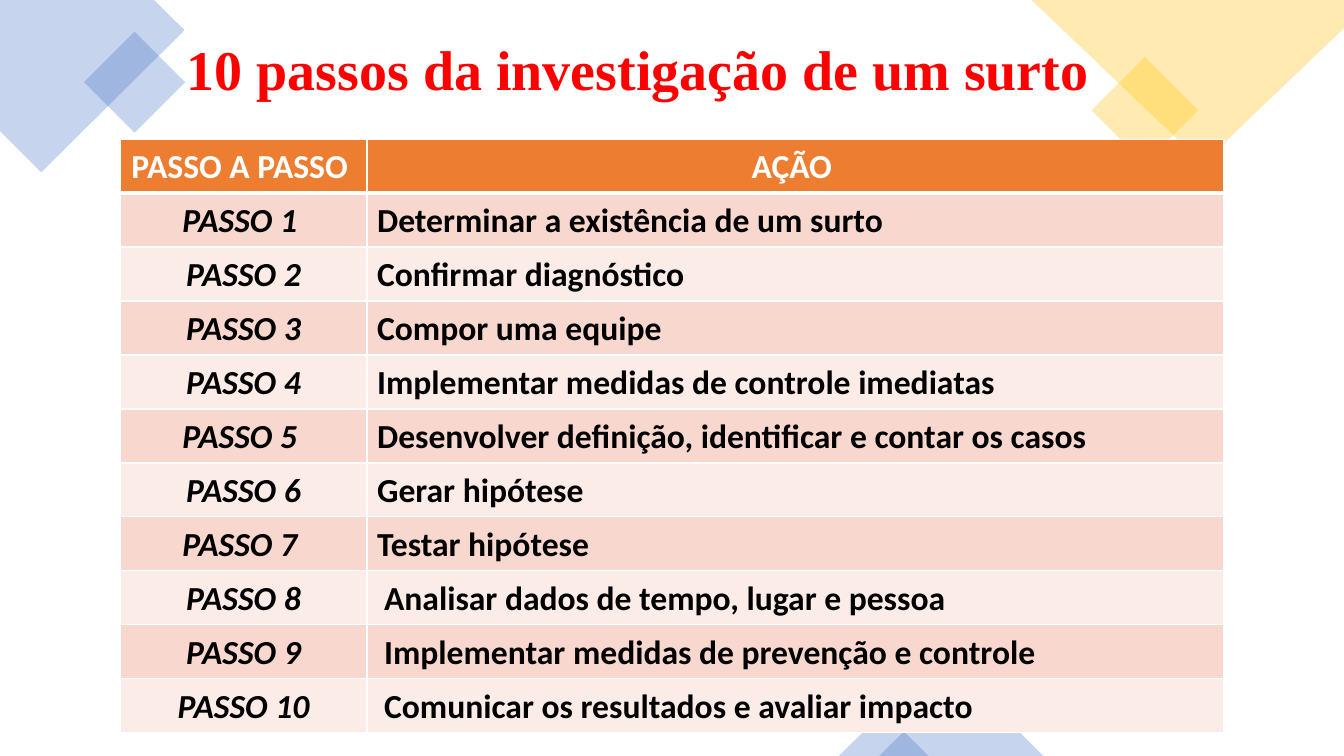
import pptx
import pptx.dml.color
import pptx.enum.shapes
import pptx.enum.text
import pptx.oxml
import pptx.oxml.ns
import pptx.util
from dataclasses import dataclass

# Content
TITLE = "10 passos da investigação de um surto"
HEADERS = ("PASSO A PASSO ", "AÇÃO ")
ACTIONS = [
    "Determinar a existência de um surto",
    "Confirmar diagnóstico",
    "Compor uma equipe",
    "Implementar medidas de controle imediatas",
    "Desenvolver definição, identificar e contar os casos",
    "Gerar hipótese",
    "Testar hipótese",
    "Analisar dados de tempo, lugar e pessoa",
    "Implementar medidas de prevenção e controle",
    "Comunicar os resultados e avaliar impacto",
]
FIRST_INDENTED_STEP = 8
STEPS_WITH_TRAILING_SPACE = (1, 5, 7)


@dataclass(frozen=True)
class Theme:
    blue: str = "4472C4"
    gold: str = "FFC000"
    title: str = "FF0000"
    header: str = "ED7D31"
    bands: tuple = ("F8D7CE", "FCECE8")
    white: str = "FFFFFF"
    black: str = "000000"
    title_font: str = "Times New Roman"
    table_font: str = "Calibri"
    title_size: int = 40
    table_size: int = 24
    opacity: int = 30


# Layout, in inches
WIDTH, HEIGHT = 13.33, 7.5
TITLE_BOX = (0.85, 0.29, 10.95, 0.77)
TABLE_LEFT, TABLE_TOP = 1.19, 1.38
COLUMNS = (2.45, 8.5)
ROW_HEIGHT = 0.53
INSET, INDENT = 0.1, 0.07

CORNERS = [
    (Theme.blue, [(1.53, 0), (0, 0), (0, 1.3), (0.41, 1.71), (1.83, 0.3)]),
    (Theme.gold, [(WIDTH, 0), (10.23, 0), (11.93, 1.62), (WIDTH, 0.28)]),
]
SHAPES = pptx.enum.shapes.MSO_SHAPE
ACCENTS = [
    (SHAPES.RECTANGLE, (0.98, 0.46, 0.71, 0.71), 315, Theme.blue),
    (SHAPES.RECTANGLE, (10.98, 0.72, 0.75, 0.75), 315, Theme.gold),
    (SHAPES.ISOSCELES_TRIANGLE, (8.72, 6.69, 1.63, 0.81), 0, Theme.blue),
    (SHAPES.ISOSCELES_TRIANGLE, (8.32, 7.06, 0.89, 0.44), 0, Theme.blue),
]
ALIGN = pptx.enum.text.PP_ALIGN
inch = pptx.util.Inches


def rgb(color):
    return pptx.dml.color.RGBColor.from_string(color)


def paint_translucent(shape, color):
    shape.shadow.inherit = False
    shape.line.fill.background()
    shape.fill.solid()
    shape.fill.fore_color.rgb = rgb(color)
    tint = shape.fill._xPr.find(".//" + pptx.oxml.ns.qn("a:srgbClr"))
    alpha = pptx.oxml.parse_xml(
        f'<a:alpha {pptx.oxml.ns.nsdecls("a")} val="{Theme.opacity * 1000}"/>')
    tint.append(alpha)


def format_font(font, color, **values):
    font.color.rgb = rgb(color)
    for name, value in values.items():
        setattr(font, name, value)


def draw_borders(cell, widths):
    properties = cell._tc.get_or_add_tcPr()
    for side, width in zip("LRTB", widths):
        properties.append(pptx.oxml.parse_xml(
            f'<a:ln{side} {pptx.oxml.ns.nsdecls("a")} w="{pptx.util.Pt(width)}">'
            f'<a:solidFill><a:srgbClr val="{Theme.white}"/></a:solidFill></a:ln{side}>'))


def fill_cell(cell, text, fill, color, align, borders, italic=False, indent=0):
    draw_borders(cell, borders)
    cell.fill.solid()
    cell.fill.fore_color.rgb = rgb(fill)
    cell.margin_left = inch(INSET + indent)
    cell.text = text
    paragraph = cell.text_frame.paragraphs[0]
    spacing = {"alignment": align, "line_spacing": 1.07, "space_after": pptx.util.Pt(8)}
    for name, value in spacing.items():
        setattr(paragraph, name, value)
    format_font(paragraph.runs[0].font, color, name=Theme.table_font,
                size=pptx.util.Pt(Theme.table_size), bold=True, italic=italic)


def add_decoration(slide):
    for color, corners in CORNERS:
        points = [(inch(x), inch(y)) for x, y in corners]
        outline = slide.shapes.build_freeform(*points[0])
        outline.add_line_segments(points[1:])
        paint_translucent(outline.convert_to_shape(), color)
    for kind, box, rotation, color in ACCENTS:
        accent = slide.shapes.add_shape(kind, *map(inch, box))
        accent.rotation = rotation
        paint_translucent(accent, color)


def add_title(slide):
    title = slide.shapes.title
    title.left, title.top, title.width, title.height = map(inch, TITLE_BOX)
    title.text = TITLE
    title.text_frame.vertical_anchor = pptx.enum.text.MSO_ANCHOR.MIDDLE
    paragraph = title.text_frame.paragraphs[0]
    paragraph.alignment = ALIGN.CENTER
    format_font(paragraph.runs[0].font, Theme.title, name=Theme.title_font,
                size=pptx.util.Pt(Theme.title_size), bold=True)


def add_steps(slide):
    row_count = len(ACTIONS) + 1
    steps = slide.shapes.add_table(
        row_count, len(COLUMNS), inch(TABLE_LEFT), inch(TABLE_TOP),
        inch(sum(COLUMNS)), inch(ROW_HEIGHT * row_count)).table
    for column, width in zip(steps.columns, COLUMNS):
        column.width = inch(width)

    # Header row, with a heavier rule below it
    for column, header in enumerate(HEADERS):
        fill_cell(steps.cell(0, column), header, Theme.header, Theme.white,
                  ALIGN.CENTER, (1, 1, 1, 3))

    # Numbered steps in alternating bands
    for number, action in enumerate(ACTIONS, start=1):
        fill = Theme.bands[(number - 1) % 2]
        borders = (1, 1, 3 if number == 1 else 1, 1)
        label = f"PASSO {number}" + (" " if number in STEPS_WITH_TRAILING_SPACE else "")
        indent = INDENT if number >= FIRST_INDENTED_STEP else 0
        fill_cell(steps.cell(number, 0), label, fill, Theme.black,
                  ALIGN.CENTER, borders, italic=True)
        fill_cell(steps.cell(number, 1), action, fill, Theme.black,
                  ALIGN.JUSTIFY, borders, indent=indent)


def main():
    deck = pptx.Presentation()
    deck.slide_width, deck.slide_height = inch(WIDTH), inch(HEIGHT)
    slide = deck.slides.add_slide(deck.slide_layouts.get_by_name("Title Only"))
    add_decoration(slide)
    add_title(slide)
    add_steps(slide)
    deck.save("out.pptx")


if __name__ == "__main__":
    main()
